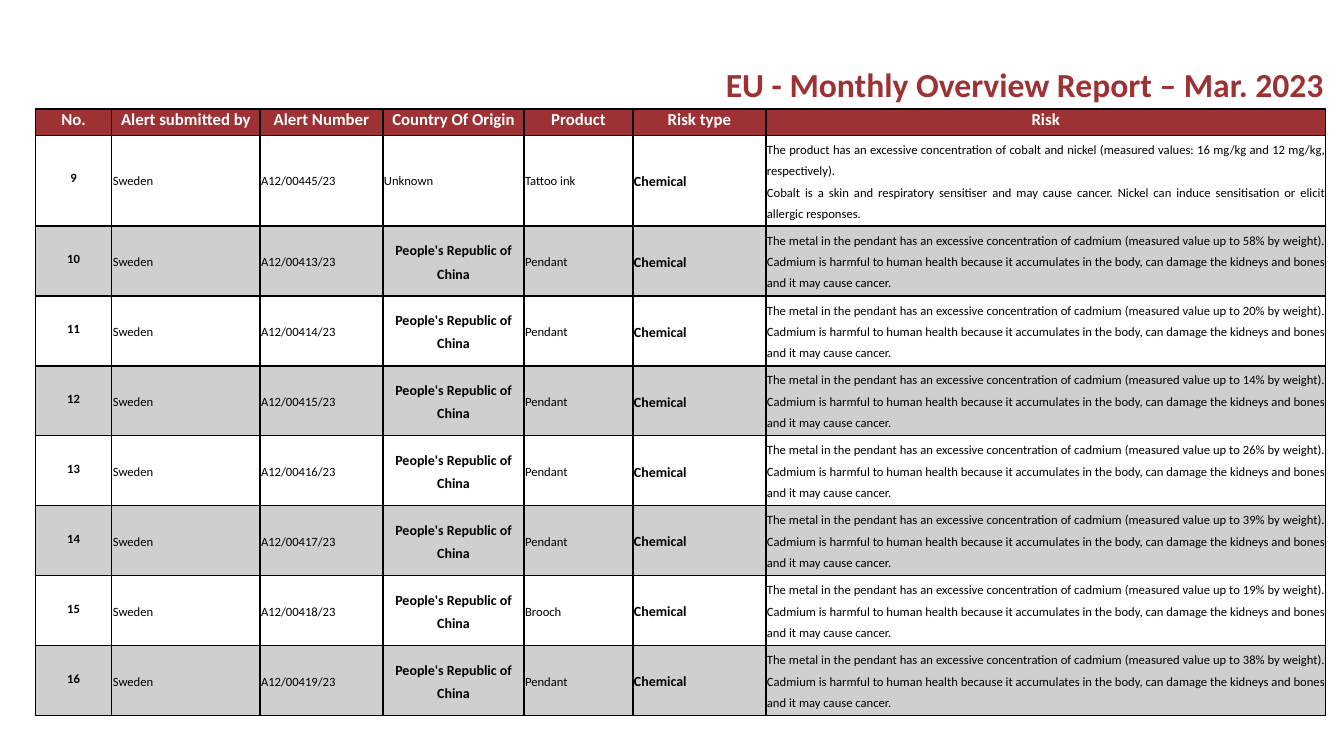
from dataclasses import dataclass

from lxml import etree
from pptx import Presentation
from pptx.dml.color import RGBColor
from pptx.enum.text import MSO_ANCHOR, MSO_AUTO_SIZE, PP_ALIGN
from pptx.oxml.ns import qn
from pptx.util import Pt

CENTER, JUSTIFY, LEFT = PP_ALIGN.CENTER, PP_ALIGN.JUSTIFY, PP_ALIGN.LEFT
TOP, MIDDLE = MSO_ANCHOR.TOP, MSO_ANCHOR.MIDDLE
GROW = MSO_AUTO_SIZE.SHAPE_TO_FIT_TEXT
TITLE_ONLY = 5


@dataclass(frozen=True)
class Theme:
    font: str = "Calibri"
    red: str = "9E3134"
    white: str = "FFFFFF"
    black: str = "000000"
    gray: str = "D0CECE"
    title: int = 24
    header: int = 12
    strong: int = 10
    body: int = 9


THEME = Theme()


@dataclass(frozen=True)
class TextStyle:
    size: int
    color: str = THEME.black
    bold: bool = False
    align: int = JUSTIFY
    spacing: float = 1.4


TITLE = TextStyle(THEME.title, THEME.red, True, LEFT, 1.0)
HEADER = TextStyle(THEME.header, THEME.white, True, CENTER, 1.0)
NUMBER = TextStyle(THEME.body, bold=True, align=CENTER, spacing=1.0)
PLAIN = TextStyle(THEME.body)
STRONG = TextStyle(THEME.strong, bold=True)
ORIGIN = TextStyle(THEME.strong, bold=True, align=CENTER)

CHINA = "People's Republic of China"
UNKNOWN = "Unknown"
COLUMNS = {
    "No.": 54.72,
    "Alert submitted by": 105.84,
    "Alert Number": 87.84,
    "Country Of Origin": 100.8,
    "Product": 77.76,
    "Risk type": 95.04,
    "Risk": 399.6,
}
HEADER_HEIGHT, FIRST_HEIGHT, ROW_HEIGHT = 18.7, 64.8, 50
FIRST_NUMBER = 9
INK_RISK = (
    "The product has an excessive concentration of cobalt and nickel "
    "(measured values: 16 mg/kg and 12 mg/kg, respectively).\n"
    "Cobalt is a skin and respiratory sensitiser and may cause cancer. "
    "Nickel can induce sensitisation or elicit allergic responses."
)


def cadmium_risk(percent):
    return (
        "The metal in the pendant has an excessive concentration of cadmium "
        f"(measured value up to {percent}% by weight). Cadmium is harmful to "
        "human health because it accumulates in the body, can damage the "
        "kidneys and bones and it may cause cancer."
    )


ALERTS = [
    ("A12/00445/23", UNKNOWN, "Tattoo ink", INK_RISK),
    ("A12/00413/23", CHINA, "Pendant", cadmium_risk(58)),
    ("A12/00414/23", CHINA, "Pendant", cadmium_risk(20)),
    ("A12/00415/23", CHINA, "Pendant", cadmium_risk(14)),
    ("A12/00416/23", CHINA, "Pendant", cadmium_risk(26)),
    ("A12/00417/23", CHINA, "Pendant", cadmium_risk(39)),
    ("A12/00418/23", CHINA, "Brooch", cadmium_risk(19)),
    ("A12/00419/23", CHINA, "Pendant", cadmium_risk(38)),
]


def set_values(target, values):
    for name, value in values.items():
        setattr(target, name, value)


def write_text(frame, text, style):
    frame.text = text
    for para in frame.paragraphs:
        set_values(para, {"alignment": style.align, "line_spacing": style.spacing})
        for span in para.runs:
            set_values(span.font, {"name": THEME.font, "size": Pt(style.size), "bold": style.bold})
            span.font.color.rgb = RGBColor.from_string(style.color)


def add_borders(cell):
    properties = cell._tc.get_or_add_tcPr()
    for index, side in enumerate(("lnL", "lnR", "lnT", "lnB")):
        line = etree.Element(qn(f"a:{side}"), w=str(Pt(1)))
        fill = etree.SubElement(line, qn("a:solidFill"))
        etree.SubElement(fill, qn("a:srgbClr"), val=THEME.black)
        properties.insert(index, line)


def write_cell(cell, text, style, fill):
    set_values(cell, {
        "margin_left": Pt(0.72),
        "margin_top": Pt(0.72),
        "margin_right": Pt(0.72),
        "margin_bottom": Pt(3.6),
        "vertical_anchor": MIDDLE,
    })
    cell.fill.solid()
    cell.fill.fore_color.rgb = RGBColor.from_string(fill)
    add_borders(cell)
    write_text(cell.text_frame, text, style)


def add_title(page, text):
    box = page.shapes.title
    set_values(box, {"left": Pt(511.2), "top": Pt(41.8), "width": Pt(443.5), "height": Pt(36)})
    set_values(box.text_frame, {"word_wrap": False, "auto_size": GROW, "vertical_anchor": TOP})
    write_text(box.text_frame, text, TITLE)


def add_alert_table(page):
    heights = [HEADER_HEIGHT, FIRST_HEIGHT] + [ROW_HEIGHT] * (len(ALERTS) - 1)
    table = page.shapes.add_table(
        len(heights), len(COLUMNS), Pt(25.2), Pt(77.8),
        Pt(sum(COLUMNS.values())), Pt(sum(heights)),
    ).table
    set_values(table, {"first_row": False, "horz_banding": False})
    for column, width in zip(table.columns, COLUMNS.values()):
        column.width = Pt(width)
    for row, height in zip(table.rows, heights):
        row.height = Pt(height)
    for cell, heading in zip(table.rows[0].cells, COLUMNS):
        write_cell(cell, heading, HEADER, THEME.red)
    for index, (alert, origin, product, risk) in enumerate(ALERTS):
        fill = THEME.gray if index % 2 else THEME.white
        entries = [
            (str(FIRST_NUMBER + index), NUMBER),
            ("Sweden", PLAIN),
            (alert, PLAIN),
            (origin, PLAIN if origin == UNKNOWN else ORIGIN),
            (product, PLAIN),
            ("Chemical", STRONG),
            (risk, PLAIN),
        ]
        for cell, (text, style) in zip(table.rows[index + 1].cells, entries):
            write_cell(cell, text, style, fill)


def main():
    deck = Presentation()
    set_values(deck, {"slide_width": Pt(960), "slide_height": Pt(540)})
    page = deck.slides.add_slide(deck.slide_layouts[TITLE_ONLY])
    add_title(page, "EU - Monthly Overview Report – Mar. 2023")
    add_alert_table(page)
    deck.save("out.pptx")


if __name__ == "__main__":
    main()
